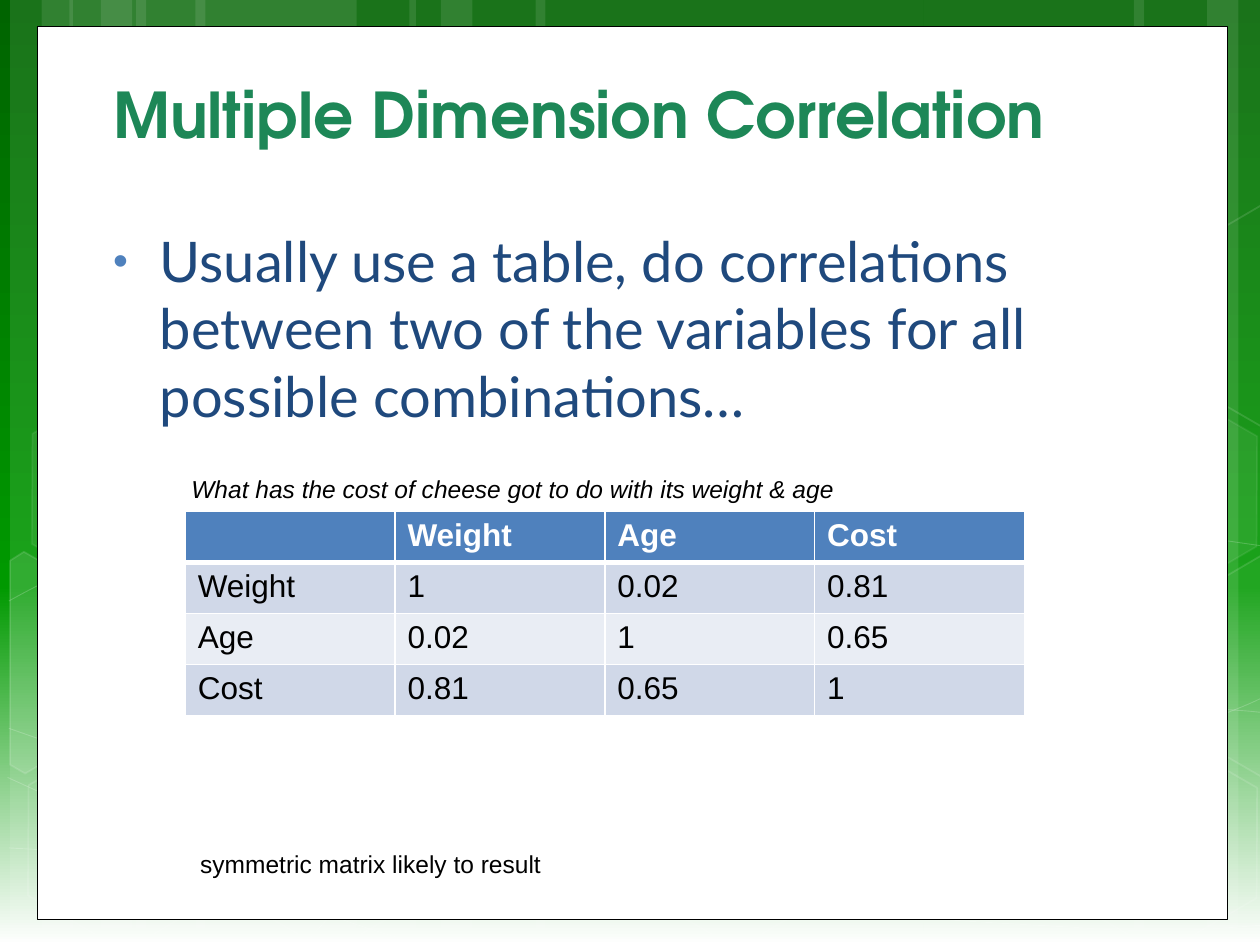
from copy import deepcopy

from lxml import etree
from pptx import Presentation
from pptx.dml.color import RGBColor
from pptx.enum.shapes import MSO_SHAPE
from pptx.enum.text import MSO_ANCHOR, MSO_AUTO_SIZE, PP_ALIGN
from pptx.oxml.ns import qn
from pptx.util import Inches, Pt

RECTANGLE, HEXAGON = MSO_SHAPE.RECTANGLE, MSO_SHAPE.HEXAGON
BOTTOM, LEFT = MSO_ANCHOR.BOTTOM, PP_ALIGN.LEFT
NO_FIT, GROW = MSO_AUTO_SIZE.NONE, MSO_AUTO_SIZE.SHAPE_TO_FIT_TEXT
COLORS = {
    "dark_green": "006400", "green": "009900", "white": "FFFFFF", "black": "000000",
    "title": "1D8757", "body": "1F497D", "blue": "4F81BD",
    "band": "D0D8E8", "light_band": "E9EDF4",
}
RGB = {name: RGBColor.from_string(value) for name, value in COLORS.items()}


def style_veil(shape, fill_opacity, line_opacity, line_width):
    shape.shadow.inherit = False
    for fill, opacity in ((shape.fill, fill_opacity), (shape.line.fill, line_opacity)):
        if opacity:
            fill.solid()
            fill.fore_color.rgb = RGB["white"]
        else:
            fill.background()
    if line_opacity:
        shape.line.width = Pt(line_width)
    opacities = [opacity for opacity in (fill_opacity, line_opacity) if opacity]
    for color, opacity in zip(shape.element.spPr.iter(qn("a:srgbClr")), opacities):
        etree.SubElement(color, qn("a:alpha"), val=str(opacity * 1000))


def format_run(paragraph, font_name, size, color, bold=False, italic=False):
    font = paragraph.runs[0].font
    font.name, font.size, font.color.rgb = font_name, Pt(size), RGB[color]
    font.bold, font.italic = bold, italic


presentation = Presentation()
presentation.slide_width, presentation.slide_height = Inches(10), Inches(7.5)
slide = presentation.slides.add_slide(presentation.slide_layouts[5])
shapes = slide.shapes

background = slide.background.fill
background.gradient()
background.gradient_angle = 270
stop_list = next(slide.element.iter(qn("a:gsLst")))
stop_list.append(deepcopy(stop_list[-1]))
gradient = (("dark_green", 0), ("green", 0.62), ("white", 1))
for stop, (color, position) in zip(background.gradient_stops, gradient):
    stop.color.rgb = RGB[color]
    stop.position = position

bands = [
    (1.08, 1.75), (0.08, 0.5), (0.33, 0.83), (1.55, 1.75), (0.55, 0.5), (0.8, 0.83),
    (7.33, 1.75), (9.58, 0.5), (9, 0.83), (4.25, 3.08), (3.25, 0.5), (3.5, 0.83),
]
for left, width in bands:
    band = shapes.add_shape(RECTANGLE, Inches(left), 0, Inches(width), Inches(7.5))
    style_veil(band, 10, None, 0)

curves = [
    [(0.07, 6.73), (0.61, 6.76), (1.15, 6.79), (1.9, 6.78), (2.65, 6.77), (3.58, 6.75),
     (4.58, 6.65), (5.58, 6.55), (7, 6.36), (7.92, 6.17), (8.83, 5.98), (9.77, 5.68),
     (10.07, 5.51)],
    [(0.07, 4.77), (0.36, 4.61), (0.65, 4.46), (1.21, 4.31), (1.78, 4.16), (2.59, 3.94),
     (3.47, 3.87), (4.36, 3.8), (5.44, 3.79), (6.54, 3.87), (7.64, 3.95), (9.47, 4.26),
     (10.07, 4.34)],
    [(0.06, 6.17), (1.27, 6.72), (2.47, 7.27), (3.34, 7.49)],
    [(0.07, 5.78), (0.38, 5.89), (0.7, 6), (1.28, 6.16), (1.86, 6.31), (2.73, 6.56),
     (3.57, 6.73), (4.4, 6.9), (5.45, 7.08), (6.28, 7.18), (7.11, 7.29), (8, 7.33),
     (8.53, 7.36), (9.05, 7.4), (9.19, 7.38), (9.45, 7.38), (9.71, 7.37), (9.89, 7.35),
     (10.07, 7.34)],
    [(2.42, 7.49), (2.6, 7.29), (2.78, 7.09), (3.02, 6.91), (3.26, 6.73), (3.6, 6.53),
     (3.88, 6.39), (4.16, 6.25), (4.33, 6.19), (4.7, 6.09), (5.06, 5.99), (5.73, 5.85),
     (6.08, 5.78), (6.44, 5.71), (6.49, 5.71), (6.8, 5.69), (7.11, 5.66), (7.6, 5.63),
     (7.94, 5.62), (8.29, 5.61), (8.86, 5.62), (8.86, 5.62), (9.08, 5.62), (9.31, 5.62),
     (9.53, 5.62), (9.71, 5.63), (9.88, 5.64), (9.97, 5.65), (10.06, 5.66), (10.03, 5.65),
     (10.06, 5.66)],
]
for controls in curves:
    points = [(Inches(x), Inches(y)) for x, y in controls]
    builder = shapes.build_freeform(*points[0])
    builder.add_line_segments(points[1:], close=False)
    curve = builder.convert_to_shape()
    segments = list(curve.element.iter(qn("a:lnTo")))
    outline = segments[0].getparent()
    for start in range(0, len(segments), 3):
        bezier = etree.SubElement(outline, qn("a:cubicBezTo"))
        for segment in segments[start:start + 3]:
            bezier.append(segment[0])
            outline.remove(segment)
    style_veil(curve, None, 20, 0.5)

hexagons = [
    (4.97, 5.89, 6, 12), (0.11, 5.91, None, 12), (0.14, 3.12, 7, 8),
    (1.74, 5.92, None, 12), (8.34, 5.93, None, 12), (8.34, 3.14, 7, 8),
]
for left, top, fill_opacity, line_opacity in hexagons:
    hexagon = shapes.add_shape(HEXAGON, Inches(left), Inches(top), Inches(1.75), Inches(1.52))
    hexagon.rotation = 30
    hexagon.adjustments[0] = 0.285
    style_veil(hexagon, fill_opacity, line_opacity, 1)

cut_hexagons = [
    ([(0.08, 4.45), (0.19, 4.38), (0.96, 4.82), (0.95, 5.7), (0.2, 6.14), (0.08, 6.07)], 10),
    ([(9.26, 4.85), (10.01, 4.41), (10.09, 4.46), (10.09, 6.13), (10.02, 6.17), (9.26, 5.73)], 4),
    ([(9.26, 2.07), (10.01, 1.63), (10.1, 1.68), (10.09, 3.35), (10.02, 3.39), (9.26, 2.95)], None),
]
for corners, fill_opacity in cut_hexagons:
    points = [(Inches(x), Inches(y)) for x, y in corners]
    builder = shapes.build_freeform(*points[0])
    builder.add_line_segments(points[1:], close=True)
    style_veil(builder.convert_to_shape(), fill_opacity, 12, 1)

panel = shapes.add_shape(RECTANGLE, Inches(0.3), Inches(0.21), Inches(9.44), Inches(7.09))
panel.shadow.inherit = False
panel.fill.solid()
panel.fill.fore_color.rgb = RGB["white"]
panel.line.color.rgb = RGB["black"]
panel.line.width = Pt(0.5)

title = shapes.title
shapes.element.append(title.element)
title.left, title.top, title.width, title.height = map(Inches, (0.8, 0.49, 8.42, 0.76))
title_frame = title.text_frame
title_frame.text = "Multiple Dimension Correlation"
title_frame.auto_size = NO_FIT
title_frame.vertical_anchor = BOTTOM
title_frame.paragraphs[0].alignment = LEFT
format_run(title_frame.paragraphs[0], "TeX Gyre Adventor", 36, "title", bold=True)

body = shapes.add_textbox(Inches(0.8), Inches(1.75), Inches(8.42), Inches(4.94))
body.text_frame.word_wrap = True
paragraph = body.text_frame.paragraphs[0]
paragraph.text = ("Usually use a table, do correlations between two of the variables "
                  "for all possible combinations…")
paragraph.space_before = Pt(6.4)
format_run(paragraph, "Lato", 32, "body")
properties = paragraph._p.get_or_add_pPr()
properties.set("marL", str(Inches(0.37)))
properties.set("indent", str(-Inches(0.37)))
bullet_color = etree.SubElement(properties, qn("a:buClr"))
etree.SubElement(bullet_color, qn("a:srgbClr"), val=COLORS["blue"])
etree.SubElement(properties, qn("a:buSzPct"), val="76000")
etree.SubElement(properties, qn("a:buFont"), typeface="Arial")
etree.SubElement(properties, qn("a:buChar"), char="•")

rows = [
    ["", "Weight", "Age", "Cost"],
    ["Weight", "1", "0.02", "0.81"],
    ["Age", "0.02", "1", "0.65"],
    ["Cost", "0.81", "0.65", "1"],
]
row_fills = ["blue", "band", "light_band", "band"]
table = shapes.add_table(4, 4, Inches(1.47), Inches(4.06), Inches(6.66), Inches(1.62)).table
for row_index, values in enumerate(rows):
    for column_index, value in enumerate(values):
        cell = table.cell(row_index, column_index)
        cell_properties = cell._tc.get_or_add_tcPr()
        for side in ("L", "R", "T", "B"):
            thick = (row_index, side) in ((0, "B"), (1, "T"))
            border = etree.SubElement(cell_properties, qn("a:ln" + side),
                                      w=str(Pt(3 if thick else 1)))
            border_fill = etree.SubElement(border, qn("a:solidFill"))
            etree.SubElement(border_fill, qn("a:srgbClr"), val=COLORS["white"])
        cell.fill.solid()
        cell.fill.fore_color.rgb = RGB[row_fills[row_index]]
        if value:
            cell.text = value
            header = row_index == 0
            format_run(cell.text_frame.paragraphs[0], "Arial", 18,
                       "white" if header else "black", bold=header)

captions = [
    ("symmetric matrix likely to result", 1.49, 6.69, 2.92, False),
    ("What has the cost of cheese got to do with its weight & age", 1.42, 3.71, 5.38, True),
]
for text, left, top, width, italic in captions:
    caption = shapes.add_textbox(Inches(left), Inches(top), Inches(width), Inches(0.34))
    caption.text_frame.text = text
    caption.text_frame.word_wrap = False
    caption.text_frame.auto_size = GROW
    format_run(caption.text_frame.paragraphs[0], "Arial", 14, "black", italic=italic)

presentation.save("out.pptx")
